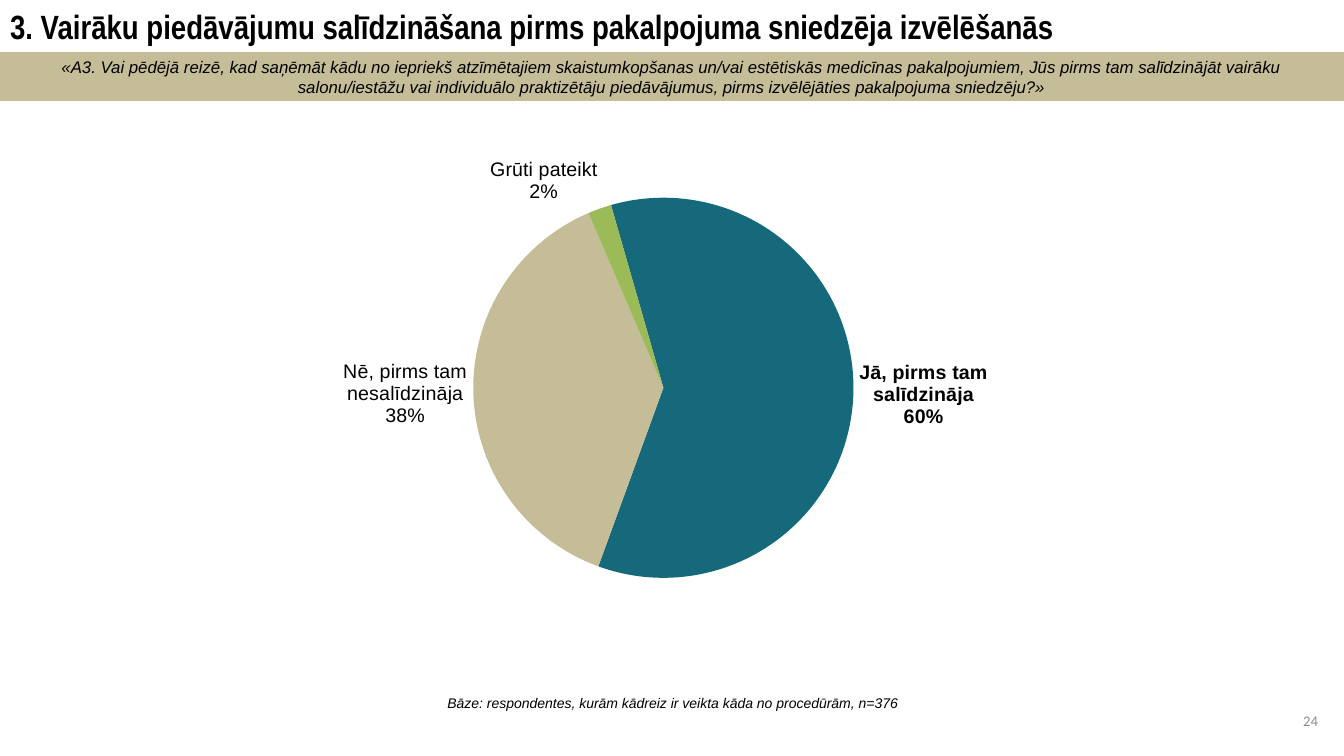
from dataclasses import dataclass
from lxml.etree import SubElement
from pptx import Presentation
from pptx.chart.data import CategoryChartData as ChartData
from pptx.dml.color import RGBColor as RGB
from pptx.enum.chart import XL_CHART_TYPE as Kind, XL_LABEL_POSITION as Spot
from pptx.enum.shapes import MSO_SHAPE as Shape
from pptx.enum.text import MSO_ANCHOR as Anchor, PP_ALIGN as Align
from pptx.oxml import parse_xml
from pptx.oxml.ns import nsdecls, qn
from pptx.util import Inches, Pt


@dataclass(frozen=True)
class Theme:
    ink: RGB = RGB(0, 0, 0)
    gray: RGB = RGB(0x8C, 0x8C, 0x8C)
    teal: RGB = RGB(0x16, 0x69, 0x7A)
    sand: RGB = RGB(0xC4, 0xBD, 0x97)
    green: RGB = RGB(0x9B, 0xBB, 0x59)
    body: str = "Arial"
    head: str = "Arial Narrow"
    page: str = "Calibri"
    title: float = 24
    label: float = 14
    query: float = 12
    folio: float = 10.5
    note: float = 10


THEME = Theme()
WIDE, HIGH = 13.33, 7.5


def style(font, size, name=THEME.body, color=THEME.ink, bold=False, italic=False):
    font.size, font.name = Pt(size), name
    font.bold, font.italic = bold, italic
    font.color.rgb = color


def write(shape, lines, align, anchor, **look):
    frame = shape.text_frame
    frame.word_wrap = True
    frame.vertical_anchor = anchor
    par = frame.paragraphs[0]
    par.alignment = align
    for i, line in enumerate(lines):
        if i:
            par.add_line_break()
        run = par.add_run()
        run.text = line
        style(run.font, **look)


def add_title(slide, box, text):
    title = slide.shapes.title
    title.left, title.top, title.width, title.height = map(Inches, box)
    write(title, [text], Align.LEFT, Anchor.MIDDLE,
          size=THEME.title, name=THEME.head, bold=True)


def add_query(slide, box, lines):
    band = slide.shapes.add_shape(Shape.RECTANGLE, *map(Inches, box))
    band.shadow.inherit = False
    band.fill.solid()
    band.fill.fore_color.rgb = THEME.sand
    band.line.color.rgb = THEME.sand
    band.line.width = Pt(0.75)
    write(band, lines, Align.CENTER, Anchor.MIDDLE, size=THEME.query, italic=True)


def add_text(slide, box, text, align, anchor, **look):
    shape = slide.shapes.add_textbox(*map(Inches, box))
    write(shape, [text], align, anchor, **look)


def show_share(node):
    for tag, val in (("showVal", "0"), ("showCatName", "1"), ("showPercent", "1")):
        node.find(qn("c:" + tag)).set("val", val)
    mark = parse_xml(f"<c:separator {nsdecls('c')}>\n</c:separator>")
    node.find(qn("c:showBubbleSize")).addnext(mark)


def place_plot(chart, inner):
    area = chart.plots[0]._element.getparent()
    for old in area.findall(qn("c:layout")):
        area.remove(old)
    fields = "".join(f'<c:{tag} val="{val}"/>' for tag, val in zip("xywh", inner))
    area.insert(0, parse_xml(
        f'<c:layout {nsdecls("c")}><c:manualLayout><c:layoutTarget val="inner"/>'
        f'<c:xMode val="edge"/><c:yMode val="edge"/>{fields}'
        "</c:manualLayout></c:layout>"))


def add_pie(slide, box, slices, start, inner):
    data = ChartData()
    data.categories = [name for name, _, _ in slices]
    data.add_series("Series 1", [val for _, val, _ in slices])
    chart = slide.shapes.add_chart(Kind.PIE, *map(Inches, box), data).chart
    chart.has_title = chart.has_legend = False
    style(chart.font, THEME.note)
    plot = chart.plots[0]
    plot.vary_by_categories = True
    SubElement(plot._element, qn("c:firstSliceAng")).set("val", str(start))
    place_plot(chart, inner)

    series = plot.series[0]
    labels = series.data_labels
    style(labels.font, THEME.label)
    labels.number_format = "0%"
    labels.number_format_is_linked = False
    labels.position = Spot.OUTSIDE_END
    show_share(labels._element)
    for i, (_, _, color) in enumerate(slices):
        fill = series.points[i].format.fill
        fill.solid()
        fill.fore_color.rgb = color
    lead = series.points[0].data_label
    style(lead.font, THEME.label, bold=True)
    lead.position = Spot.OUTSIDE_END
    show_share(labels._element.find(qn("c:dLbl")))


def main():
    deck = Presentation()
    deck.slide_width, deck.slide_height = Inches(WIDE), Inches(HIGH)
    slide = deck.slides.add_slide(deck.slide_layouts[5])
    add_title(slide, (0, 0, WIDE, 0.52),
              "3. Vairāku piedāvājumu salīdzināšana pirms pakalpojuma sniedzēja izvēlēšanās")
    add_query(slide, (0, 0.52, WIDE, 0.48), [
        "«A3. Vai pēdējā reizē, kad saņēmāt kādu no iepriekš atzīmētajiem skaistumkopšanas "
        "un/vai estētiskās medicīnas pakalpojumiem, Jūs pirms tam salīdzinājāt vairāku",
        "salonu/iestāžu vai individuālo praktizētāju piedāvājumus, "
        "pirms izvēlējāties pakalpojuma sniedzēju?»"])
    add_pie(slide, (2.18, 1.39, 8.98, 5.12), [
        ("Jā, pirms tam salīdzināja", 60, THEME.teal),
        ("Nē, pirms tam nesalīdzināja", 38, THEME.sand),
        ("Grūti pateikt", 2, THEME.green)], 344, (0.28, 0.07, 0.42, 0.82))
    add_text(slide, (1.67, 6.58, 10, 0.79),
             "Bāze: respondentes, kurām kādreiz ir veikta kāda no procedūrām, n=376",
             Align.CENTER, Anchor.MIDDLE, size=THEME.note, italic=True)
    add_text(slide, (11.75, 7.01, 1.42, 0.4), "24", Align.RIGHT, Anchor.TOP,
             size=THEME.folio, name=THEME.page, color=THEME.gray)
    deck.save("out.pptx")


if __name__ == "__main__":
    main()
